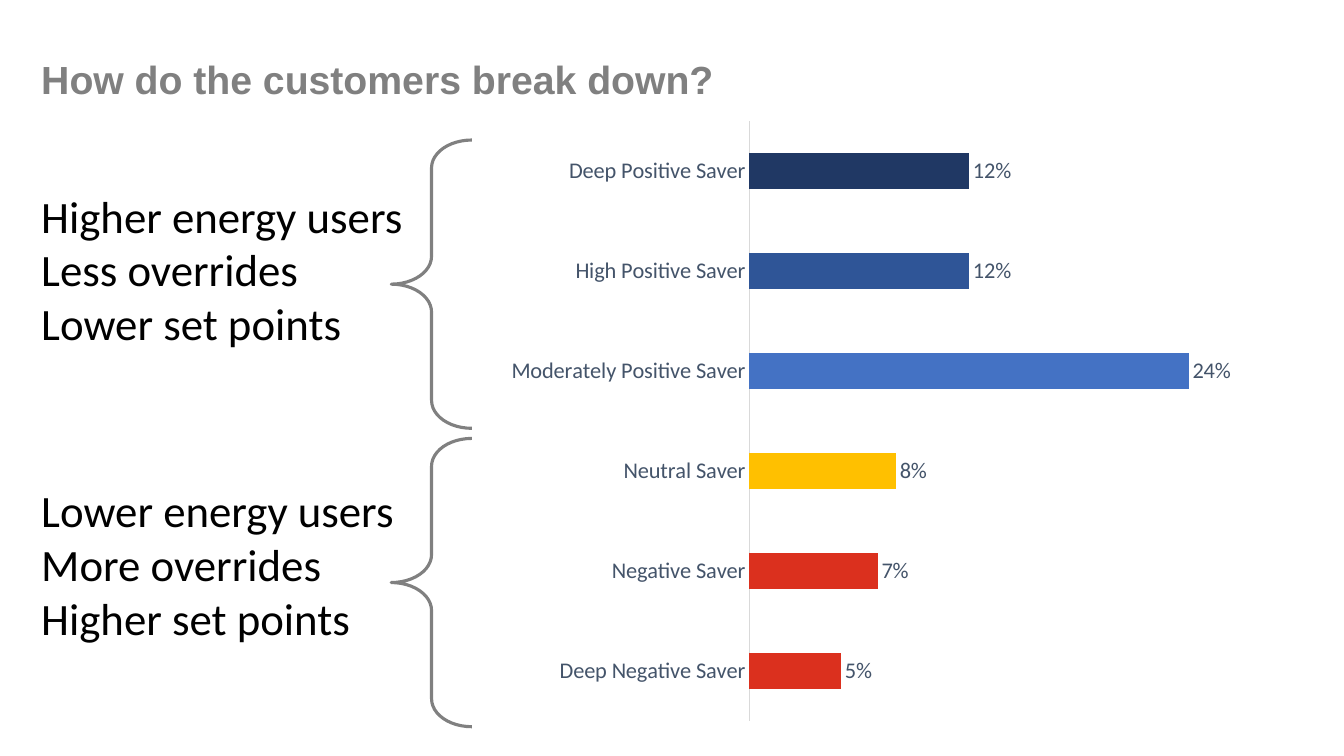
"""Build the slide on how customers break down by energy savings."""
from dataclasses import dataclass

from lxml.etree import SubElement
from pptx import Presentation
from pptx.chart.data import CategoryChartData
from pptx.dml.color import RGBColor
from pptx.enum.chart import XL_CHART_TYPE, XL_LABEL_POSITION, XL_TICK_MARK
from pptx.enum.shapes import MSO_SHAPE
from pptx.enum.text import MSO_ANCHOR
from pptx.oxml import parse_xml
from pptx.oxml.ns import nsdecls, qn
from pptx.slide import Slide
from pptx.text.text import Font
from pptx.util import Inches, Pt

WIDE, HIGH = 13.33, 7.5


@dataclass(frozen=True)
class Style:
    """Type face, size, colour and weight of a text."""
    face: str
    size: int
    ink: str
    bold: bool = False


@dataclass(frozen=True)
class Theme:
    """Text styles and colours of the slide."""
    title: Style = Style("Arial", 28, "808080", True)
    body: Style = Style("Calibri", 32, "000000")
    label: Style = Style("Calibri", 16, "44546A")
    brace: str = "808080"
    axis: str = "D9D9D9"
    navy: str = "203864"
    blue: str = "2F5597"
    sky: str = "4472C4"
    gold: str = "FFC000"
    red: str = "DB301E"


@dataclass(frozen=True)
class Box:
    """A frame in percent of the slide's width and height."""
    left: float
    top: float
    width: float
    height: float

    def place(self) -> tuple[int, int, int, int]:
        """Return the frame as lengths for a new shape."""
        return (Inches(WIDE * self.left / 100), Inches(HIGH * self.top / 100),
                Inches(WIDE * self.width / 100), Inches(HIGH * self.height / 100))


@dataclass(frozen=True)
class Bar:
    """One kind of saver with its share and colour."""
    name: str
    share: float
    fill: str


@dataclass(frozen=True)
class Group:
    """Traits of some savers, and the tops of their text and brace."""
    traits: tuple[str, ...]
    text_top: float
    brace_top: float


THEME = Theme()
MARGIN = 2.33
TITLE = Box(MARGIN, 5.6, 100 - MARGIN, 10.4)
CHART = Box(35.03, 14, 61.89, 83.47)
PLOT = {"x": 0.335, "y": 0.024, "w": 0.66, "h": 0.951}
BARS = (
    Bar("Deep Negative Saver", 0.05, THEME.red),
    Bar("Negative Saver", 0.07, THEME.red),
    Bar("Neutral Saver", 0.08, THEME.gold),
    Bar("Moderately Positive Saver", 0.24, THEME.sky),
    Bar("High Positive Saver", 0.12, THEME.blue),
    Bar("Deep Positive Saver", 0.12, THEME.navy),
)
GROUPS = (
    Group(("Higher energy users", "Less overrides", "Lower set points"), 24.27, 18.53),
    Group(("Lower energy users", "More overrides", "Higher set points"), 63.2, 58),
)


def set_font(font: Font, style: Style) -> None:
    """Apply a style to a font."""
    font.name, font.size, font.bold = style.face, Pt(style.size), style.bold
    font.color.rgb = RGBColor.from_string(style.ink)


def add_text(slide: Slide, box: Box, lines: tuple[str, ...], style: Style,
             anchor: MSO_ANCHOR = MSO_ANCHOR.TOP, pitch: float = 1.0) -> None:
    """Add a text box with one paragraph per line."""
    frame = slide.shapes.add_textbox(*box.place()).text_frame
    frame.word_wrap = True
    frame.vertical_anchor = anchor
    for row, line in enumerate(lines):
        para = frame.add_paragraph() if row else frame.paragraphs[0]
        para.line_spacing = pitch
        run = para.add_run()
        run.text = line
        set_font(run.font, style)


def add_brace(slide: Slide, box: Box) -> None:
    """Add a left brace."""
    brace = slide.shapes.add_shape(MSO_SHAPE.LEFT_BRACE, *box.place())
    brace.shadow.inherit = False
    brace.adjustments[0] = 0.346
    brace.fill.background()
    brace.line.color.rgb = RGBColor.from_string(THEME.brace)
    brace.line.width = Pt(2.25)


def add_bars(slide: Slide, box: Box, bars: tuple[Bar, ...]) -> None:
    """Add the bar chart of savers."""
    data = CategoryChartData(number_format="0%")
    data.categories = [bar.name for bar in bars]
    data.add_series("Series 1", [bar.share for bar in bars])
    chart = slide.shapes.add_chart(XL_CHART_TYPE.BAR_CLUSTERED, *box.place(), data).chart
    chart.has_legend = chart.has_title = False
    set_font(chart.font, THEME.label)

    axis = chart.category_axis
    axis.major_tick_mark = axis.minor_tick_mark = XL_TICK_MARK.NONE
    axis.has_major_gridlines = False
    axis.format.line.color.rgb = RGBColor.from_string(THEME.axis)
    axis.format.line.width = Pt(0.75)
    set_font(axis.tick_labels.font, THEME.label)
    scale = chart.value_axis
    scale.minimum_scale, scale.maximum_scale = 0, 0.3
    scale.has_major_gridlines = scale.visible = False

    plot = chart.plots[0]
    plot.gap_width = 182
    plot.vary_by_categories = False
    plot.has_data_labels = True
    labels = plot.data_labels
    labels.show_value = True
    labels.position = XL_LABEL_POSITION.OUTSIDE_END
    labels.number_format, labels.number_format_is_linked = "0%", False
    set_font(labels.font, THEME.label)
    for spot, bar in enumerate(bars):
        fill = plot.series[0].points[spot].format.fill
        fill.solid()
        fill.fore_color.rgb = RGBColor.from_string(bar.fill)

    area = chart.element.find(".//" + qn("c:plotArea"))
    for old in area.findall(qn("c:layout")):
        area.remove(old)
    layout = parse_xml(f"<c:layout {nsdecls('c')}><c:manualLayout/></c:layout>")
    parts = {"layoutTarget": "inner", "xMode": "edge", "yMode": "edge", **PLOT}
    for tag, val in parts.items():
        SubElement(layout[0], qn(f"c:{tag}")).set("val", str(val))
    area.insert(0, layout)


def main() -> None:
    """Build and save the slide."""
    deck = Presentation()
    deck.slide_width, deck.slide_height = Inches(WIDE), Inches(HIGH)
    slide = deck.slides.add_slide(deck.slide_layouts[6])
    add_bars(slide, CHART, BARS)
    add_text(slide, TITLE, ("How do the customers break down?",), THEME.title,
             MSO_ANCHOR.MIDDLE, 0.9)
    for group in GROUPS:
        add_text(slide, Box(MARGIN, group.text_top, 28.73, 22.93), group.traits, THEME.body)
        add_brace(slide, Box(29.11, group.brace_top, 6, 38.13))
    deck.save("out.pptx")


if __name__ == "__main__":
    main()
